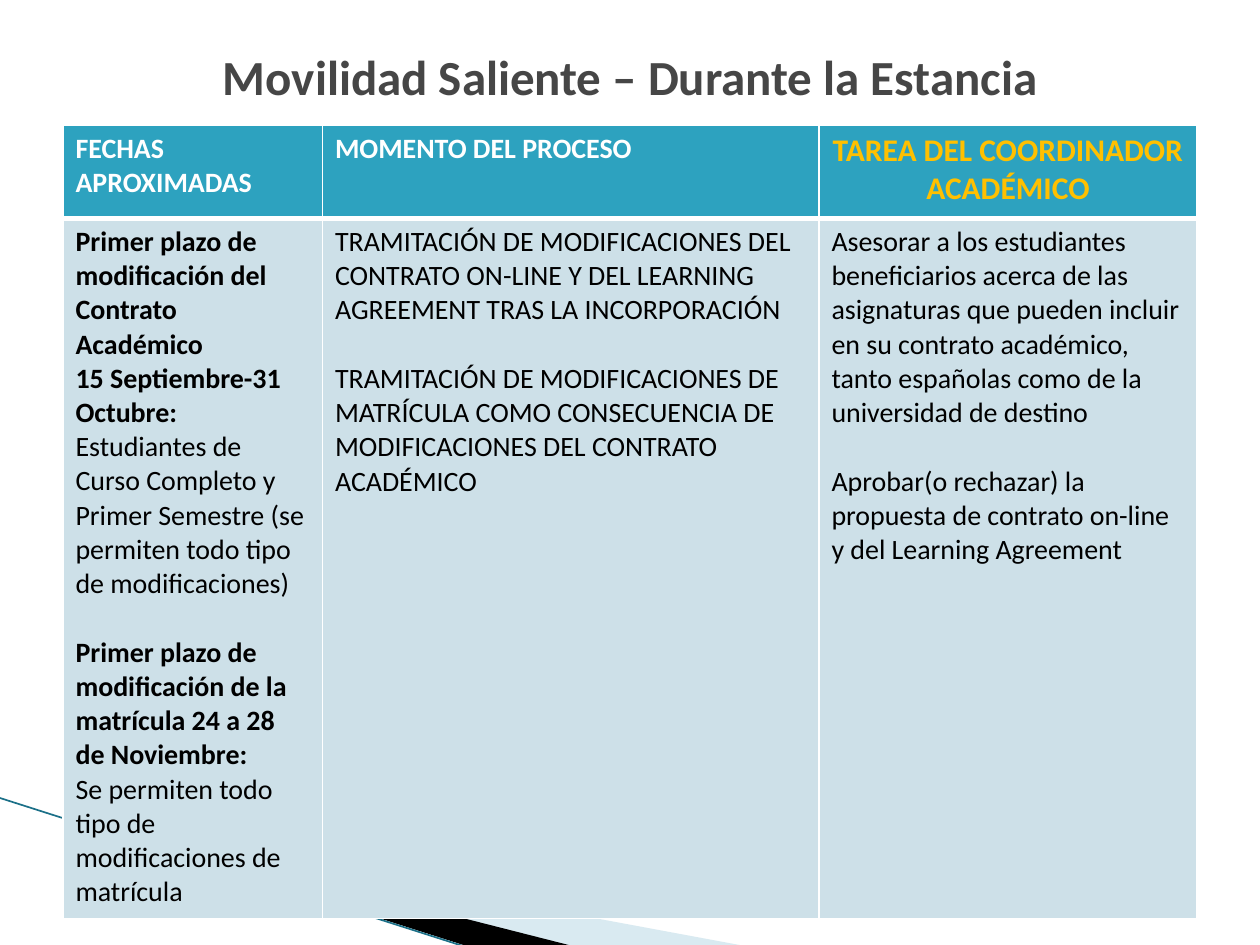
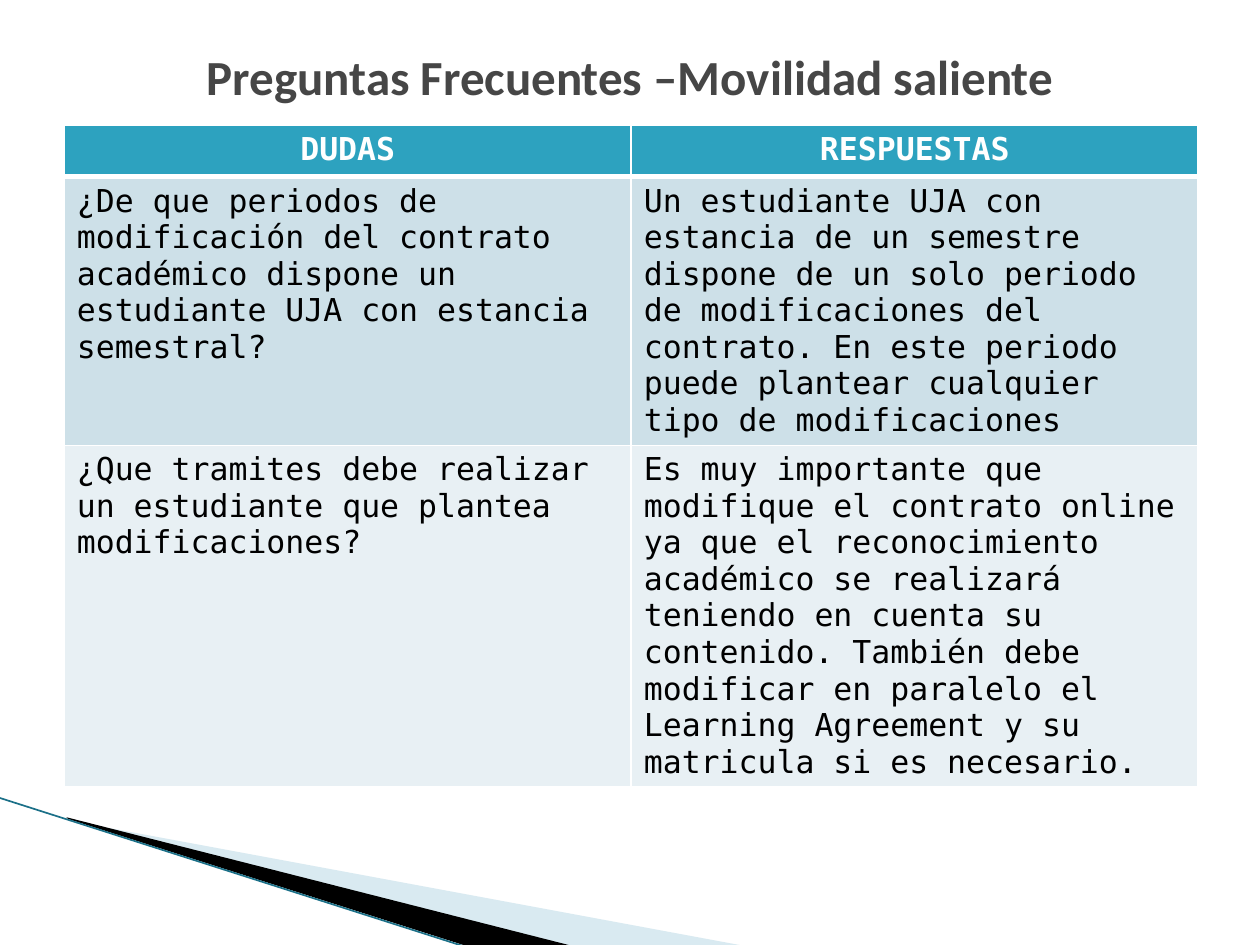
from dataclasses import dataclass

from lxml.etree import SubElement
from pptx import Presentation
from pptx.dml.color import RGBColor
from pptx.enum.shapes import MSO_CONNECTOR
from pptx.enum.text import MSO_ANCHOR, PP_ALIGN
from pptx.oxml import parse_xml
from pptx.oxml.ns import nsdecls, qn
from pptx.util import Pt


@dataclass(frozen=True)
class Theme:
    sans: str = "Calibri"
    mono: str = "DejaVu Sans Mono"
    title: str = "464646"
    header: str = "2DA2BF"
    bands: tuple = ("CDE0E8", "E8F0F4")
    white: str = "FFFFFF"
    black: str = "000000"
    accent: str = "FFC000"
    wedge: str = "A0CBDC"
    edge: str = "1B7088"
    title_size: int = 28
    large: int = 18
    body: int = 16


T = Theme()


def add_run(p, text, *, font=T.sans, size=T.body, color=T.black, bold=False):
    r = p.add_run()
    r.text = text
    r.font.name = font
    r.font.size = Pt(size)
    r.font.bold = bold
    r.font.color.rgb = RGBColor.from_string(color)


def set_borders(cell, top=1, bottom=1):
    """White cell borders; widths in points."""
    tcPr = cell._tc.get_or_add_tcPr()
    for i, (side, width) in enumerate(
            (("L", 1), ("R", 1), ("T", top), ("B", bottom))):
        tcPr.insert(i, parse_xml(
            f'<a:ln{side} {nsdecls("a")} w="{Pt(width)}"><a:solidFill>'
            f'<a:srgbClr val="{T.white}"/></a:solidFill></a:ln{side}>'))


# Wedges in the bottom left corner: points, colour, opacity in percent
wedges = [
    ([(39.6, 468.7), (428.4, 540.7), (328.3, 540.7), (39.6, 468)], T.wedge, 40),
    ([(38.2, 467.3), (329, 540.7), (267.8, 541.4), (38.9, 468)], T.black, 100),
]

# A cell is a list of paragraphs (space before, [(text, bold), ...])
GAP = 19.6
dates = [
    (0, [("Primer plazo de modificación del Contrato Académico", True)]),
    (0, [("15 Septiembre-31 Octubre: ", True),
         ("Estudiantes de Curso Completo y Primer Semestre (se permiten todo "
          "tipo de modificaciones)", False)]),
    (GAP, [("Primer plazo de modificación de la matrícula 24 a 28 de "
            "Noviembre:", True)]),
    (0, [("Se permiten todo tipo de modificaciones de matrícula", False)]),
]
process = [
    (0, [("TRAMITACIÓN DE MODIFICACIONES DEL CONTRATO ON-LINE Y DEL LEARNING "
          "AGREEMENT TRAS LA INCORPORACIÓN", False)]),
    (GAP, [("TRAMITACIÓN DE MODIFICACIONES DE MATRÍCULA COMO CONSECUENCIA DE "
            "MODIFICACIONES DEL CONTRATO ACADÉMICO", False)]),
]
tasks = [
    (0, [("Asesorar a los estudiantes beneficiarios acerca de las asignaturas "
          "que pueden incluir en su contrato académico, tanto españolas como "
          "de la universidad de destino", False)]),
    (GAP, [("Aprobar(o rechazar) la propuesta de contrato on-line y del "
            "Learning Agreement", False)]),
]
questions = [
    ("¿De que periodos de modificación del contrato académico dispone un "
     "estudiante UJA con estancia semestral?",
     "Un estudiante UJA con estancia de un semestre dispone de un solo periodo "
     "de modificaciones del contrato. En este periodo puede plantear cualquier "
     "tipo de modificaciones"),
    ("¿Que tramites debe realizar un estudiante que plantea modificaciones?",
     "Es muy importante que modifique el contrato online ya que el "
     "reconocimiento académico se realizará teniendo en cuenta su contenido. "
     "También debe modificar en paralelo el Learning Agreement y su matricula "
     "si es necesario."),
]

# Header cells are (text, size, colour, alignment)
slides = [
    dict(title="Movilidad Saliente – Durante la Estancia",
         left=36, font=T.sans, size=T.body,
         widths=(148.3, 283.7, 216), heights=(53.3, 400),
         header=[("FECHAS APROXIMADAS", T.body, T.white, PP_ALIGN.LEFT),
                 ("MOMENTO DEL PROCESO", T.body, T.white, PP_ALIGN.LEFT),
                 ("TAREA DEL COORDINADOR ACADÉMICO", T.large, T.accent,
                  PP_ALIGN.CENTER)],
         rows=[(dates, process, tasks)]),
    dict(title="Preguntas Frecuentes –Movilidad saliente",
         left=36.7, font=T.mono, size=T.large,
         widths=(324, 324), heights=(29.5, 153, 195),
         header=[(text, T.large, T.white, PP_ALIGN.CENTER)
                 for text in ("DUDAS", "RESPUESTAS")],
         rows=[[[(0, [(text, False)])] for text in pair]
               for pair in questions]),
]

prs = Presentation()
prs.slide_width, prs.slide_height = Pt(720), Pt(540)

for data in slides:
    s = prs.slides.add_slide(prs.slide_layouts[5])

    for points, color, opacity in wedges:
        builder = s.shapes.build_freeform(*points[0], scale=Pt(1))
        builder.add_line_segments(points[1:], close=True)
        sp = builder.convert_to_shape()
        sp.shadow.inherit = False
        sp.line.fill.background()
        sp.fill.solid()
        sp.fill.fore_color.rgb = RGBColor.from_string(color)
        if opacity < 100:
            clr = sp.element.spPr.find(qn("a:solidFill"))[0]
            SubElement(clr, qn("a:alpha"), val=str(opacity * 1000))

    edge = s.shapes.add_connector(MSO_CONNECTOR.STRAIGHT, Pt(-0.7), Pt(455.8),
                                  Pt(267.1), Pt(541.4))
    edge.line.width = Pt(0.95)
    edge.line.color.rgb = RGBColor.from_string(T.edge)
    SubElement(edge.element.spPr, qn("a:effectLst"))

    title = s.shapes.title
    title.left, title.top = Pt(36), Pt(21.6)
    title.width, title.height = Pt(648), Pt(44)
    tf = title.text_frame
    tf.vertical_anchor = MSO_ANCHOR.MIDDLE
    p = tf.paragraphs[0]
    p.alignment = PP_ALIGN.CENTER
    add_run(p, data["title"], size=T.title_size, color=T.title, bold=True)

    widths, heights = data["widths"], data["heights"]
    table = s.shapes.add_table(len(heights), len(widths), Pt(data["left"]),
                               Pt(71.5), Pt(sum(widths)),
                               Pt(sum(heights))).table
    for column, width in zip(table.columns, widths):
        column.width = Pt(width)
    for row, height in zip(table.rows, heights):
        row.height = Pt(height)

    for col, (text, size, color, align) in enumerate(data["header"]):
        cell = table.cell(0, col)
        cell.fill.solid()
        cell.fill.fore_color.rgb = RGBColor.from_string(T.header)
        set_borders(cell, bottom=3)
        p = cell.text_frame.paragraphs[0]
        p.alignment = align
        add_run(p, text, font=data["font"], size=size, color=color, bold=True)

    for i, row in enumerate(data["rows"]):
        for col, paragraphs in enumerate(row):
            cell = table.cell(i + 1, col)
            cell.fill.solid()
            cell.fill.fore_color.rgb = RGBColor.from_string(T.bands[i % 2])
            set_borders(cell, top=1 if i else 3)
            tf = cell.text_frame
            for n, (gap, runs) in enumerate(paragraphs):
                p = tf.add_paragraph() if n else tf.paragraphs[0]
                if gap:
                    p.space_before = Pt(gap)
                for text, bold in runs:
                    add_run(p, text, font=data["font"], size=data["size"],
                            bold=bold)

prs.save("out.pptx")
